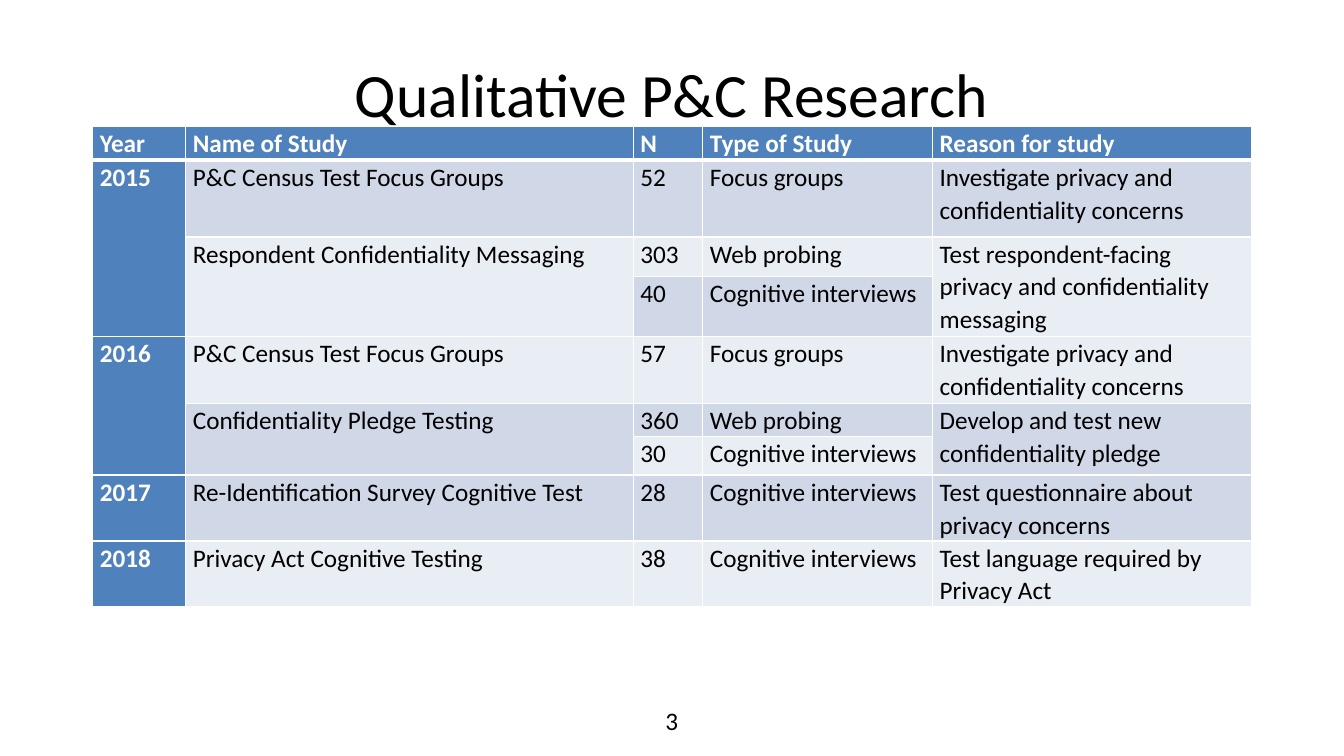
from dataclasses import dataclass

from lxml.etree import SubElement
from pptx import Presentation
from pptx.dml.color import RGBColor
from pptx.enum.text import MSO_ANCHOR, PP_ALIGN
from pptx.oxml.ns import qn
from pptx.util import Cm, Pt


@dataclass(frozen=True)
class Theme:
    font: str = "Calibri"
    title_size: int = 44
    body_size: int = 18
    text: str = "000000"
    light: str = "FFFFFF"
    accent: str = "4F81BD"
    bands: tuple = ("E9EDF4", "D0D8E8")
    rule: float = 1
    header_rule: float = 3
    line_spacing: float = 1.07


HEADER = ["Year", "Name of Study", "N", "Type of Study", "Reason for study"]
# None continues the cell above.
STUDIES = [
    ["2015", "P&C Census Test Focus Groups", "52", "Focus groups",
     "Investigate privacy and confidentiality concerns"],
    [None, "Respondent Confidentiality Messaging", "303", "Web probing",
     "Test respondent-facing privacy and confidentiality messaging"],
    [None, None, "40", "Cognitive interviews", None],
    ["2016", "P&C Census Test Focus Groups", "57", "Focus groups",
     "Investigate privacy and confidentiality concerns"],
    [None, "Confidentiality Pledge Testing", "360", "Web probing",
     "Develop and test new confidentiality pledge"],
    [None, None, "30", "Cognitive interviews", None],
    ["2017", "Re-Identification Survey Cognitive Test", "28", "Cognitive interviews",
     "Test questionnaire about privacy concerns"],
    ["2018", "Privacy Act Cognitive Testing", "38", "Cognitive interviews",
     "Test language required by Privacy Act"],
]
COLUMN_WIDTHS = [2.34, 11.28, 1.75, 5.79, 8.05]
ROW_HEIGHTS = [0.86, 1.93, 0.99, 1.52, 1.68, 0.84, 0.97, 1.66, 1.66]


class SlideBuilder:
    def __init__(self, slide, theme):
        self.slide = slide
        self.theme = theme

    def style(self, p, size, color, bold=False):
        p.font.name = self.theme.font
        p.font.size = Pt(size)
        p.font.bold = bold
        p.font.color.rgb = RGBColor.from_string(color)

    def text(self, text, left, top, width, height, size, anchor=MSO_ANCHOR.TOP):
        box = self.slide.shapes.add_textbox(Cm(left), Cm(top), Cm(width), Cm(height))
        tf = box.text_frame
        tf.word_wrap = True
        tf.vertical_anchor = anchor
        p = tf.paragraphs[0]
        p.text = text
        p.alignment = PP_ALIGN.CENTER
        self.style(p, size, self.theme.text)

    def borders(self, cell, top, bottom):
        """Draw solid rules; call before filling, as the XML order requires."""
        tcPr = cell._tc.get_or_add_tcPr()
        rule = self.theme.rule
        for side, width in (("L", rule), ("R", rule), ("T", top), ("B", bottom)):
            ln = SubElement(tcPr, qn(f"a:ln{side}"), w=str(Pt(width)))
            fill = SubElement(ln, qn("a:solidFill"))
            SubElement(fill, qn("a:srgbClr"), val=self.theme.light)

    def cell(self, cell, text, row, column):
        t = self.theme
        heading = row == 0 or column == 0
        self.borders(cell, t.header_rule if row == 1 else t.rule,
                     t.header_rule if row == 0 else t.rule)
        cell.fill.solid()
        cell.fill.fore_color.rgb = RGBColor.from_string(
            t.accent if heading else t.bands[row % 2])
        cell.margin_left = cell.margin_right = Cm(0.18)
        cell.margin_top = cell.margin_bottom = 0
        p = cell.text_frame.paragraphs[0]
        p.text = text or ""
        p.line_spacing = t.line_spacing
        self.style(p, t.body_size, t.light if heading else t.text, heading)

    def table(self, rows, left, top, widths, heights):
        table = self.slide.shapes.add_table(
            len(rows), len(widths), Cm(left), Cm(top),
            Cm(sum(widths)), Cm(sum(heights))).table
        for column, width in zip(table.columns, widths):
            column.width = Cm(width)
        for row, height in zip(table.rows, heights):
            row.height = Cm(height)
        for i, row in enumerate(rows):
            for j, text in enumerate(row):
                self.cell(table.cell(i, j), text, i, j)
        for j, column in enumerate(zip(*rows)):
            starts = [i for i, text in enumerate(column) if text is not None]
            for first, following in zip(starts, starts[1:] + [len(rows)]):
                if following - first > 1:
                    table.cell(first, j).merge(table.cell(following - 1, j))


def main():
    prs = Presentation()
    prs.slide_width, prs.slide_height = Cm(33.87), Cm(19.05)
    theme = Theme()
    s = SlideBuilder(prs.slides.add_slide(prs.slide_layouts[6]), theme)
    s.text("Qualitative P&C Research", 1.69, 0.76, 30.48, 3.18,
           theme.title_size, MSO_ANCHOR.MIDDLE)
    s.table([HEADER] + STUDIES, 2.34, 3.18, COLUMN_WIDTHS, ROW_HEIGHTS)
    s.text("3", 12.98, 17.65, 7.9, 1.02, theme.body_size)
    prs.save("out.pptx")


if __name__ == "__main__":
    main()
